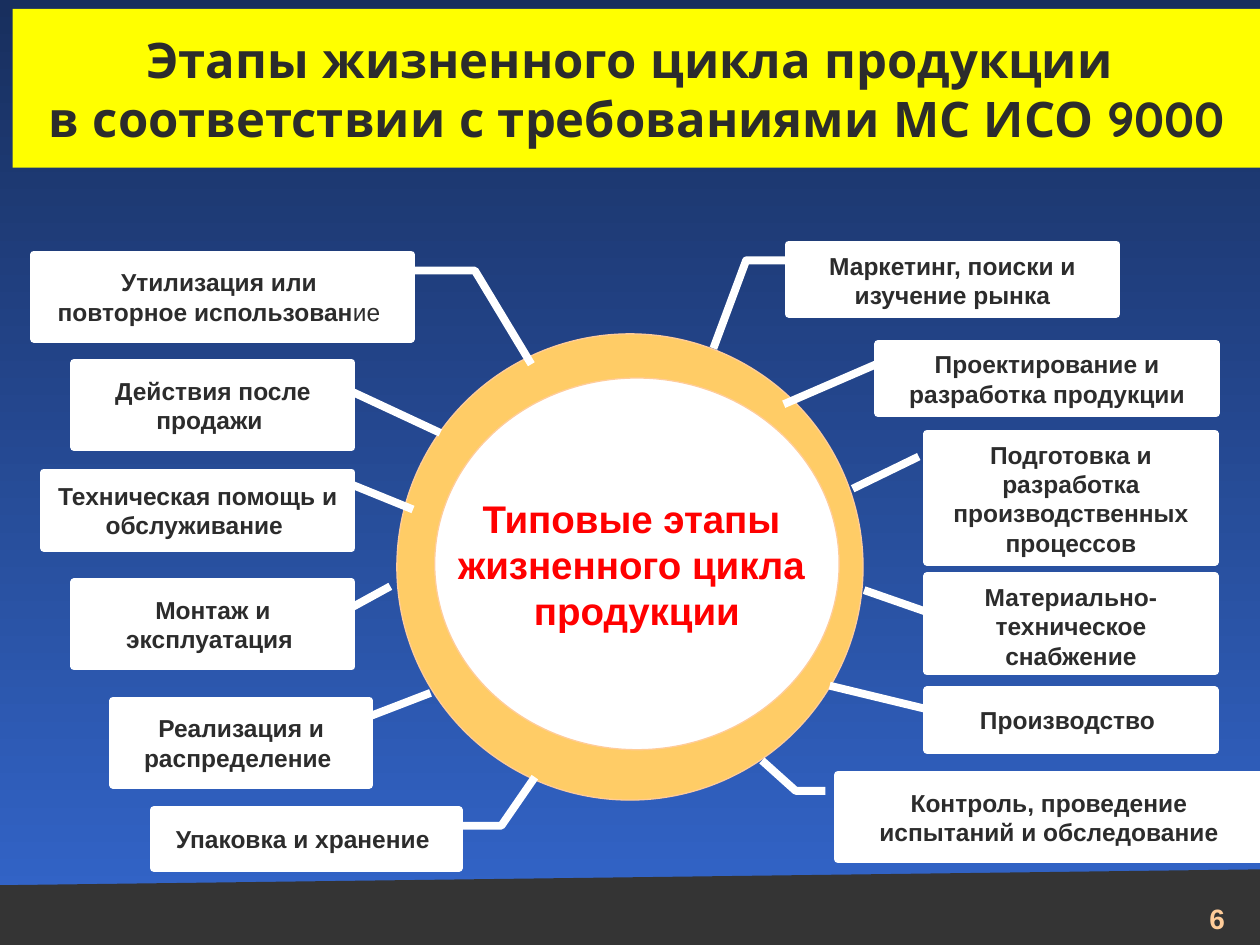
from dataclasses import dataclass

from pptx import Presentation
from pptx.dml.color import RGBColor
from pptx.enum import shapes, text
from pptx.util import Inches, Pt

COLORS = {
    "sky_top": "182F5E",
    "sky_bottom": "3366CC",
    "ground": "343434",
    "banner": "FFFF00",
    "ink": "2C2C2C",
    "ring": "FFCC66",
    "peach": "FFCC99",
    "white": "FFFFFF",
    "red": "FF0000",
}
KINDS = shapes.MSO_SHAPE
MIDDLE = text.MSO_ANCHOR.MIDDLE
TOP = text.MSO_ANCHOR.TOP
CENTER = text.PP_ALIGN.CENTER


@dataclass
class Stage:
    """A labelled box; leader holds (y, x) pairs as fractions of the box."""
    label: str
    left: float
    top: float
    width: float
    height: float
    leader: tuple[float, ...]
    anchor: text.MSO_ANCHOR = MIDDLE
    light_ending: str = ""


STAGES = [
    # Right side, top to bottom
    Stage("Маркетинг, поиски и изучение рынка", 6.26, 1.94, 2.6, 0.55,
          (0.23, 0, 0.23, -0.13, 1.5, -0.23), TOP),
    Stage("Проектирование и разработка продукции", 6.97, 2.73, 2.68, 0.55,
          (0.28, 0, 0.87, -0.28)),
    Stage("Подготовка и разработка производственных процессов", 7.36, 3.44, 2.28, 1.02,
          (0.18, -0.03, 0.43, -0.26), TOP),
    Stage("Материально-техническое снабжение", 7.36, 4.57, 2.28, 0.76,
          (0.38, 0, 0.15, -0.22), TOP),
    Stage("Производство ", 7.36, 5.48, 2.28, 0.47, (0.33, 0.01, -0.08, -0.34)),
    Stage("Контроль, проведение испытаний и обследование", 6.65, 6.15, 3.35, 0.67,
          (0.19, -0.03, 0.19, -0.1, -0.17, -0.18)),
    # Left side, bottom to top
    Stage("Упаковка и хранение ", 1.22, 6.43, 2.42, 0.46,
          (0.27, 0.99, 0.27, 1.14, -0.57, 1.25)),
    Stage("Реализация и распределение ", 0.9, 5.56, 2.03, 0.67, (0.19, 1, -0.09, 1.24)),
    Stage("Монтаж и эксплуатация ", 0.59, 4.62, 2.2, 0.67, (0.32, 0.99, 0.05, 1.14)),
    Stage("Техническая помощь и обслуживание ", 0.35, 3.75, 2.44, 0.6, (0.16, 1, 0.49, 1.2)),
    Stage("Действия после продажи ", 0.59, 2.88, 2.2, 0.67, (0.34, 1, 0.83, 1.32)),
    Stage("Утилизация или \nповторное использован", 0.27, 2.02, 2.99, 0.67,
          (0.19, 1, 0.19, 1.17, 1.3, 1.32), light_ending="ие "),
]


def rgb(name: str) -> RGBColor:
    return RGBColor.from_string(COLORS[name])


def add_span(para, words: str, size: float, color: str,
             font: str = "Arial", bold: bool = True) -> None:
    span = para.add_run()
    span.text = words
    span.font.name = font
    span.font.size = Pt(size)
    span.font.bold = bold
    span.font.color.rgb = rgb(color)


def write_lines(frame, words: str, size: float, color: str) -> None:
    """Write one centred paragraph for each line of words."""
    for index, line in enumerate(words.split("\n")):
        para = frame.add_paragraph() if index else frame.paragraphs[0]
        para.alignment = CENTER
        add_span(para, line, size, color)


def add_figure(page, kind, left: float, top: float, width: float, height: float,
               fill: str, line: str | None = None, weight: float = 0.75):
    figure = page.shapes.add_shape(kind, Inches(left), Inches(top),
                                   Inches(width), Inches(height))
    figure.shadow.inherit = False
    figure.fill.solid()
    figure.fill.fore_color.rgb = rgb(fill)
    if line:
        figure.line.color.rgb = rgb(line)
        figure.line.width = Pt(weight)
    else:
        figure.line.fill.background()
    return figure


def add_stage(page, stage: Stage) -> None:
    kind = KINDS.LINE_CALLOUT_1 if len(stage.leader) == 4 else KINDS.LINE_CALLOUT_2
    box = add_figure(page, kind, stage.left, stage.top, stage.width, stage.height,
                     "white", "white", 4.5)
    for index, value in enumerate(stage.leader):
        box.adjustments[index] = value
    frame = box.text_frame
    frame.word_wrap = True
    frame.vertical_anchor = stage.anchor
    write_lines(frame, stage.label, 14, "ink")
    if stage.light_ending:
        add_span(frame.paragraphs[-1], stage.light_ending, 14, "ink", bold=False)


def add_title(page) -> None:
    title = page.shapes.title
    title.left, title.top = Inches(0.1), Inches(0.07)
    title.width, title.height = Inches(9.9), Inches(1.26)
    title.fill.solid()
    title.fill.fore_color.rgb = rgb("banner")
    frame = title.text_frame
    frame.word_wrap = True
    frame.auto_size = text.MSO_AUTO_SIZE.NONE
    frame.vertical_anchor = MIDDLE
    para = frame.paragraphs[0]
    para.alignment = CENTER
    add_span(para, "Этапы жизненного цикла продукции ", 28, "ink", "Quicksand")
    para.add_line_break()
    add_span(para, "в соответствии с требованиями МС ИСО 9000", 28, "ink", "Quicksand")


def main() -> None:
    deck = Presentation()
    deck.slide_width, deck.slide_height = Inches(10), Inches(7.5)
    page = deck.slides.add_slide(deck.slide_layouts[5])

    # Background: gradient from top to bottom, with a dark ground
    sky = page.background.fill
    sky.gradient()
    sky.gradient_angle = 270
    for stop, name, position in zip(sky.gradient_stops, ("sky_top", "sky_bottom"), (0, 1)):
        stop.color.rgb = rgb(name)
        stop.position = position
    add_figure(page, KINDS.FLOWCHART_MANUAL_INPUT, 0, 6.9, 10, 0.63, "ground")

    add_title(page)

    # Ring with the central caption
    add_figure(page, KINDS.OVAL, 3.15, 2.65, 3.7, 3.7, "ring", "peach")
    core = add_figure(page, KINDS.OVAL, 3.45, 3, 3.21, 2.95, "white", "peach")
    core.text_frame.word_wrap = False
    core.text_frame.vertical_anchor = MIDDLE
    write_lines(core.text_frame, "Типовые этапы \nжизненного цикла \nпродукции", 22, "red")

    # Stages around the ring
    for stage in STAGES:
        add_stage(page, stage)

    # Page number
    number = page.shapes.add_textbox(Inches(9.5), Inches(7.1), Inches(0.33), Inches(0.37))
    number.text_frame.word_wrap = False
    number.text_frame.auto_size = text.MSO_AUTO_SIZE.SHAPE_TO_FIT_TEXT
    number.text_frame.vertical_anchor = MIDDLE
    add_span(number.text_frame.paragraphs[0], "6", 16, "peach")

    deck.save("out.pptx")


if __name__ == "__main__":
    main()
